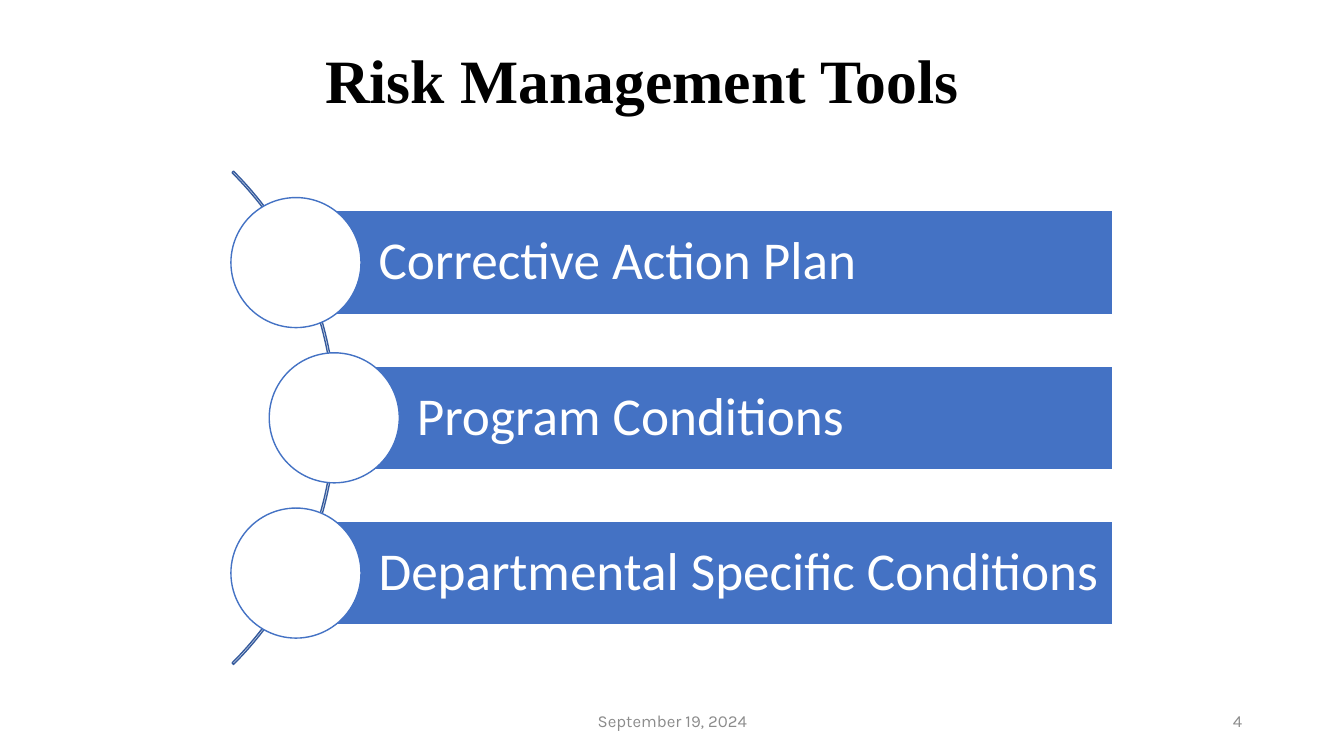
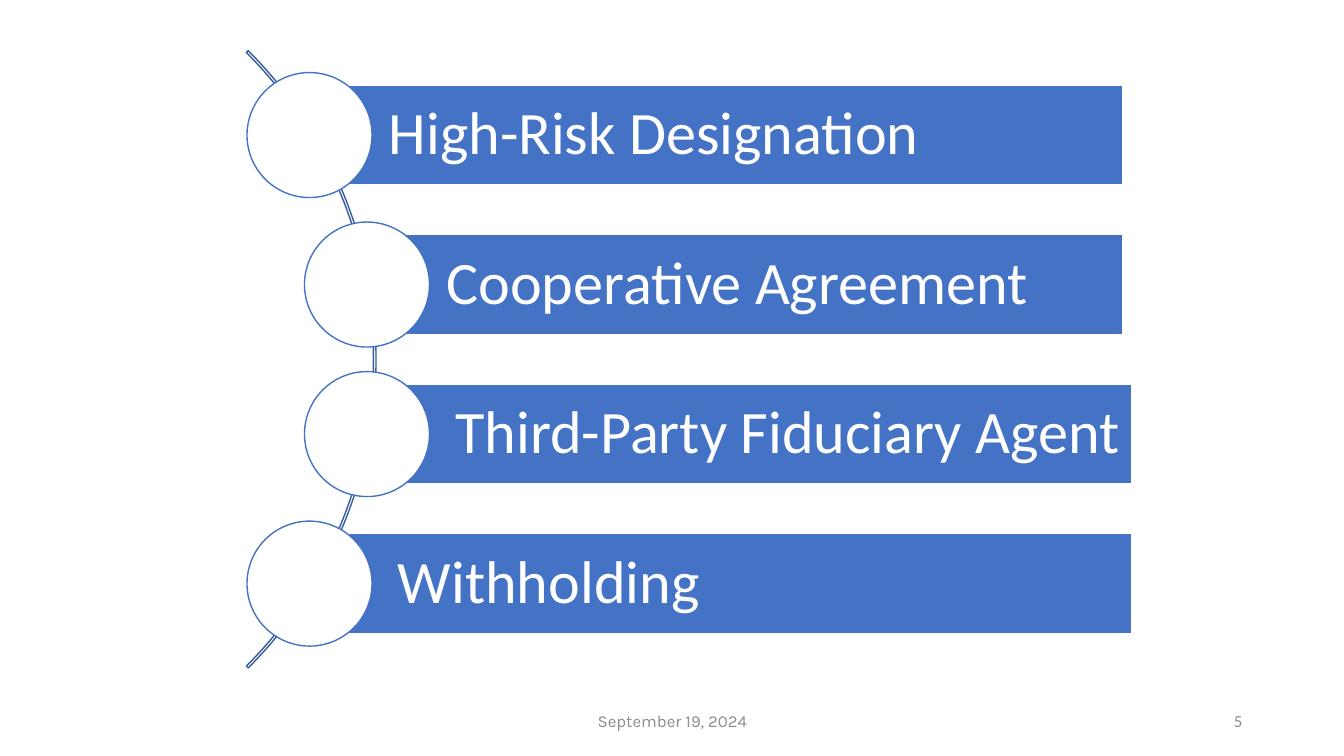
from pptx import Presentation, util as u
from pptx.dml.color import RGBColor
from pptx.enum import shapes, text

COLORS = {"bar": "4472C4", "arc": "365B9D", "white": "FFFFFF",
          "title": "000000", "footer": "8C8C8C"}
BODY, TITLE, FOOTER = "Calibri", "Times New Roman", "Karla"
SHAPE, ALIGN = shapes.MSO_SHAPE, text.PP_ALIGN


def color(name):
    return RGBColor.from_string(COLORS[name])


def write(sp, words, size, font, ink, align=ALIGN.LEFT, bold=False,
          anchor=text.MSO_ANCHOR.MIDDLE, spacing=None):
    tf = sp.text_frame
    tf.word_wrap = True
    tf.vertical_anchor = anchor
    tf.text = words
    p = tf.paragraphs[0]
    p.alignment = align
    if spacing:
        p.line_spacing = spacing
    r = p.runs[0]
    r.font.size, r.font.name, r.font.bold = u.Pt(size), font, bold
    r.font.color.rgb = color(ink)


def add_text(s, box, *args, **kwargs):
    sp = s.shapes.add_textbox(*map(u.Inches, box))
    write(sp, *args, **kwargs)


def add_shape(group, kind, box, fill, line):
    sp = group.shapes.add_shape(kind, *map(u.Inches, box))
    sp.shadow.inherit = False
    if fill:
        sp.fill.solid()
        sp.fill.fore_color.rgb = color(fill)
    else:
        sp.fill.background()
    sp.line.color.rgb = color(line)
    sp.line.width = u.Pt(1)
    return sp


def add_title(s, words):
    add_text(s, (1.09, 0.45, 10.56, 1.16), words, 44, TITLE, "title",
             ALIGN.CENTER, bold=True, anchor=text.MSO_ANCHOR.TOP, spacing=0.9)


def add_footer(s, number, number_font):
    add_text(s, (4.42, 6.95, 4.5, 0.4), "September 19, 2024", 12, FOOTER,
             "footer", ALIGN.CENTER)
    add_text(s, (9.42, 6.95, 3, 0.4), number, 12, number_font, "footer",
             ALIGN.RIGHT)


def add_curved_list(s, box, rows, circle, arc, arc_reach, size, inset):
    """Rows are (label, indent of the circle, extra shift of the bar)."""
    left, top, width, height = box
    pitch = (height - circle) / (len(rows) - 1)
    bar = 0.8 * circle
    group = s.shapes.add_group_shape()

    # Arc behind the circles, centred on the list
    sp = add_shape(group, SHAPE.BLOCK_ARC,
                   (left + arc_reach - arc, top + (height - arc) / 2, arc, arc),
                   None, "arc")
    for i, value in enumerate((189, 27, 0.003)):
        sp.adjustments[i] = value

    for i, (label, indent, shift) in enumerate(rows):
        x, y = left + indent, top + i * pitch
        # Bar starts at the middle of its circle
        start = circle / 2 + indent
        sp = add_shape(group, SHAPE.RECTANGLE,
                       (left + start + shift, y + (circle - bar) / 2,
                        width - start, bar), "bar", "white")
        tf = sp.text_frame
        tf.margin_left = u.Inches(0.635 * circle)
        tf.margin_right = tf.margin_top = tf.margin_bottom = u.Inches(inset)
        write(sp, label, size, BODY, "white", spacing=0.9)
        add_shape(group, SHAPE.OVAL, (x, y, circle, circle), "white", "bar")


def main():
    prs = Presentation()
    prs.slide_width, prs.slide_height = u.Inches(13.33), u.Inches(7.5)
    blank = prs.slide_layouts[6]

    # Slide 1: tools
    s = prs.slides.add_slide(blank)
    add_footer(s, "4", FOOTER)
    add_curved_list(s, (2.29, 1.96, 8.75, 4.37),
                    [("Corrective Action Plan", 0, 0),
                     ("Program Conditions", 0.38, 0),
                     ("Departmental Specific Conditions", 0, 0)],
                    circle=1.29, arc=6.92, arc_reach=1.04, size=38, inset=0.11)
    add_title(s, "Risk Management Tools")

    # Slide 2: more tools
    s = prs.slides.add_slide(blank)
    add_footer(s, "5", BODY)
    add_curved_list(s, (2.45, 0.72, 8.69, 5.69),
                    [("High-Risk Designation", 0, 0),
                     ("Cooperative Agreement", 0.57, 0),
                     ("Third-Party Fiduciary Agent", 0.57, 0.09),
                     ("Withholding", 0, 0.09)],
                    circle=1.24, arc=8.66, arc_reach=1.28, size=43, inset=0.12)

    prs.save("out.pptx")


if __name__ == "__main__":
    main()
